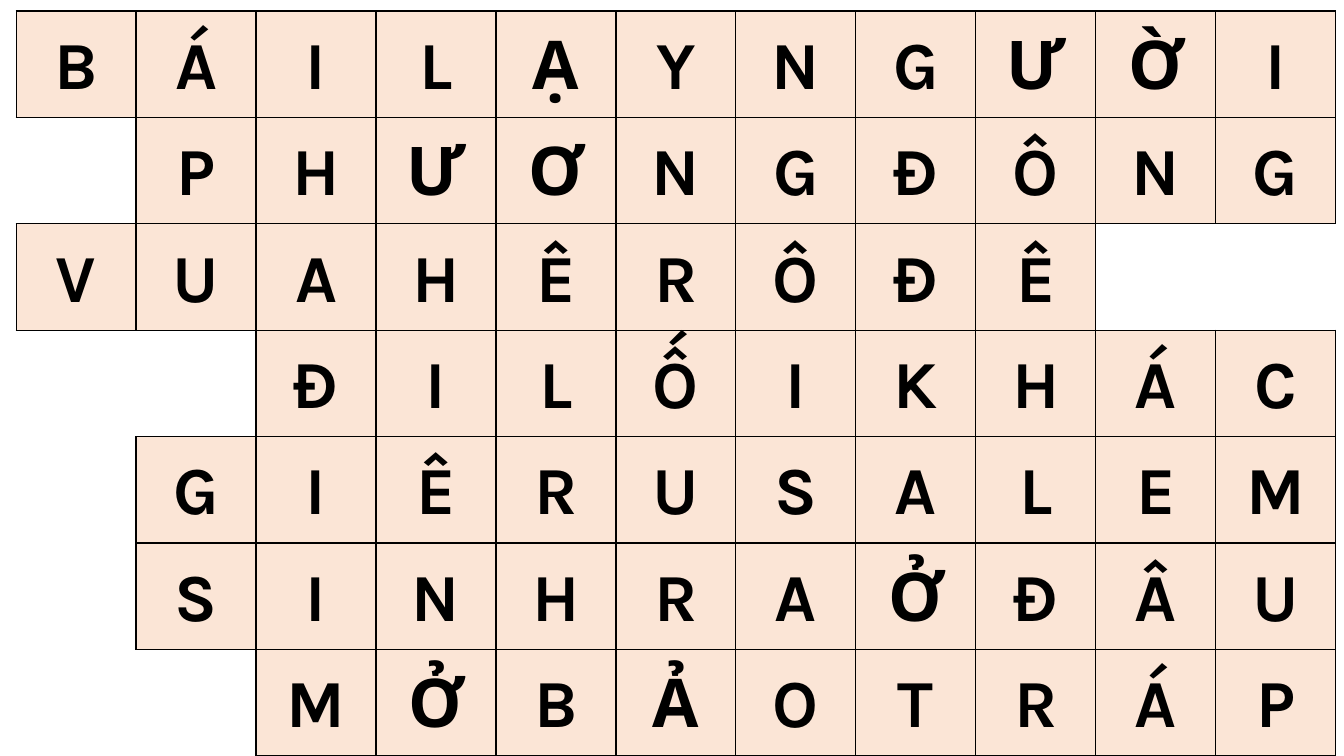
from dataclasses import dataclass

from lxml import etree
from pptx import Presentation
from pptx import util as u
from pptx.dml.color import RGBColor
from pptx.enum import text
from pptx.oxml.ns import qn
from pptx.table import _Cell


@dataclass(frozen=True)
class Theme:
    font: str = "Karla"
    size: int = 48
    ink: str = "000000"
    letter_fill: str = "FBE5D6"
    empty_fill: str = "FFFFFF"
    border_width: int = 1


@dataclass(frozen=True)
class Answer:
    start: int  # first column
    letters: str

    def letter_at(self, column: int) -> str:
        offset = column - self.start
        return self.letters[offset] if 0 <= offset < len(self.letters) else ""


THEME = Theme()
COLUMNS = 11
ANSWERS = [
    Answer(0, "BÁILẠYNGƯỜI"),
    Answer(1, "PHƯƠNGĐÔNG"),
    Answer(0, "VUAHÊRÔĐÊ"),
    Answer(2, "ĐILỐIKHÁC"),
    Answer(1, "GIÊRUSALEM"),
    Answer(1, "SINHRAỞĐÂU"),
    Answer(2, "MỞBẢOTRÁP"),
]
# Side of a cell: (row step, column step) to the neighbour, in schema order
SIDES = {"a:lnL": (0, -1), "a:lnR": (0, 1), "a:lnT": (-1, 0), "a:lnB": (1, 0)}


def letter_at(row: int, column: int) -> str:
    return ANSWERS[row].letter_at(column) if 0 <= row < len(ANSWERS) else ""


def set_borders(cell: _Cell, row: int, column: int) -> None:
    """Draw each edge that touches a letter; hide the others."""
    properties = cell._tc.get_or_add_tcPr()
    for index, (tag, (down, right)) in enumerate(SIDES.items()):
        line = etree.Element(qn(tag), w=str(u.Pt(THEME.border_width)))
        if letter_at(row, column) or letter_at(row + down, column + right):
            fill = etree.SubElement(line, qn("a:solidFill"))
            etree.SubElement(fill, qn("a:srgbClr"), val=THEME.ink)
        else:
            etree.SubElement(line, qn("a:noFill"))
        properties.insert(index, line)


def write_letter(cell: _Cell, letter: str, *, size: int, color: str, bold: bool) -> None:
    cell.vertical_anchor = text.MSO_ANCHOR.MIDDLE
    cell.margin_left = cell.margin_right = u.Inches(0.07)
    cell.margin_top = cell.margin_bottom = 0
    para = cell.text_frame.paragraphs[0]
    para.alignment = text.PP_ALIGN.CENTER
    para.line_spacing = 1.07
    para.space_after = u.Pt(8)
    span = para.add_run()
    span.text = letter
    span.font.name = THEME.font
    span.font.size = u.Pt(size)
    span.font.bold = bold
    span.font.color.rgb = RGBColor.from_string(color)


def main() -> None:
    deck = Presentation()
    deck.slide_width, deck.slide_height = u.Inches(13.33), u.Inches(7.5)
    page = deck.slides.add_slide(deck.slide_layouts[6])

    # Crossword grid
    frame = page.shapes.add_table(
        len(ANSWERS), COLUMNS,
        u.Inches(0.16), u.Inches(0.11), u.Inches(13.09), u.Inches(7.39),
    )
    grid = frame.table
    grid.first_row = grid.horz_banding = False

    # Letters, fills and edges
    for row in range(len(ANSWERS)):
        for column in range(COLUMNS):
            cell = grid.cell(row, column)
            letter = letter_at(row, column)
            cell.fill.solid()
            cell.fill.fore_color.rgb = RGBColor.from_string(
                THEME.letter_fill if letter else THEME.empty_fill
            )
            set_borders(cell, row, column)
            if letter:
                write_letter(cell, letter, size=THEME.size, color=THEME.ink, bold=True)

    deck.save("out.pptx")


if __name__ == "__main__":
    main()
